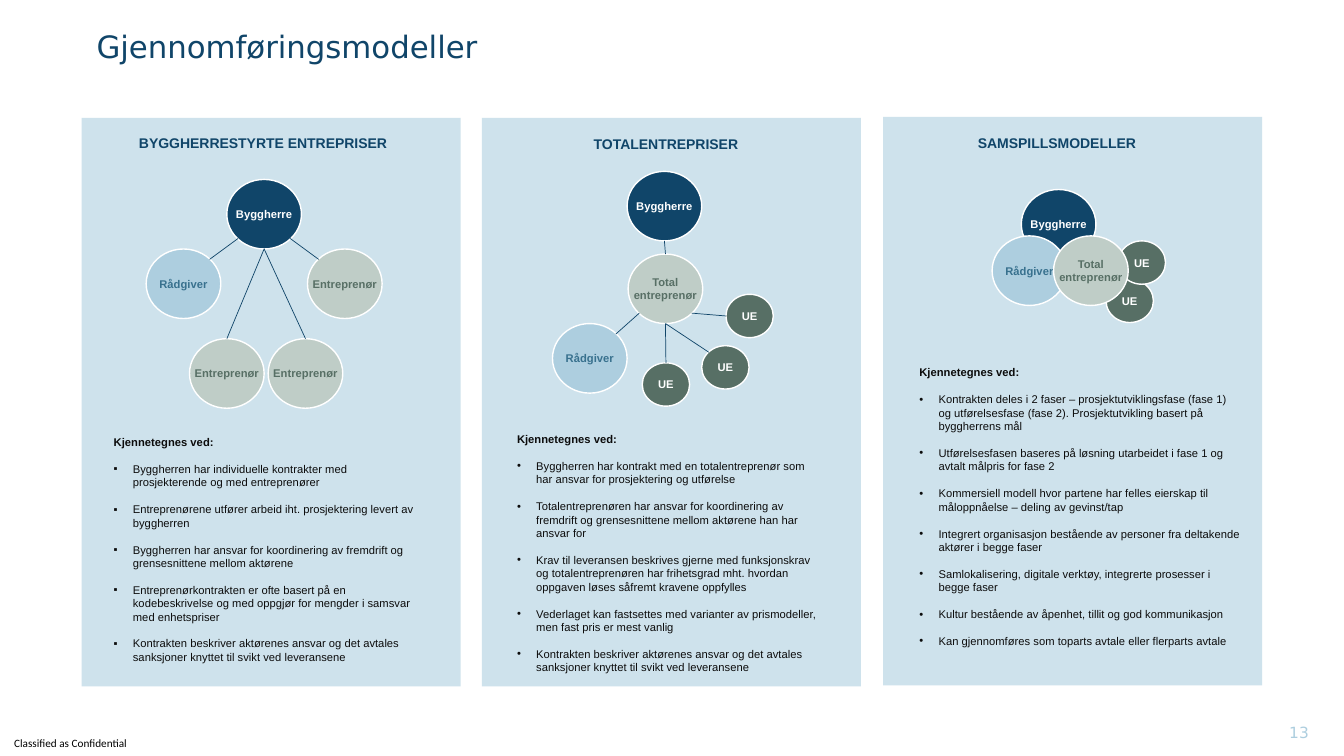
"""Build a slide comparing three contract delivery models."""
from lxml.etree import SubElement
from pptx import Presentation
from pptx.dml.color import RGBColor
from pptx.enum.shapes import MSO_CONNECTOR, MSO_SHAPE
from pptx.enum.text import MSO_ANCHOR, PP_ALIGN
from pptx.oxml.ns import qn
from pptx.util import Inches, Pt

NAVY, BLACK, WHITE, PANEL = "104569", "0C0C0C", "FFFFFF", "CEE2EC"
LARGE, SMALL = (0.74, 0.69), (0.47, 0.43)
TOP, TOP_LEFT, LEFT, BOTTOM_LEFT, BOTTOM, BOTTOM_RIGHT, RIGHT, TOP_RIGHT = range(8)
SITES = [(0.5, 0), (0.15, 0.15), (0, 0.5), (0.15, 0.85),
         (0.5, 1), (0.85, 0.85), (1, 0.5), (0.85, 0.15)]
ROLES = {
    "Byggherre": (LARGE, NAVY, WHITE),
    "Rådgiver": (LARGE, "ADCEDF", "38718E"),
    "Entreprenør": (LARGE, "BFCDC7", "576F65"),
    "Total\nentreprenør": (LARGE, "BFCDC7", "576F65"),
    "UE": (SMALL, "576F65", WHITE),
}
PAGE_TEXTS = [
    ("Gjennomføringsmodeller", (0.86, 0.16, 12.47, 0.59), 0.1,
     {"size": 22, "font": "DejaVu Sans", "color": NAVY}),
    ("13", (11.7, 7.03, 1.38, 0.47), 0.1,
     {"size": 11, "font": "DejaVu Sans", "color": "ADCEDF", "align": PP_ALIGN.RIGHT}),
    ("Classified as Confidential", (0.14, 7.25, 1.4, 0.25), 0,
     {"size": 8, "font": "Calibri", "color": "000000"}),
]
MODELS = [
    {
        "panel": (0.81, 1.17),
        "title": ("BYGGHERRESTYRTE ENTREPRISER", (1.28, 1.29, 2.69, 0.27)),
        "circles": [("Byggherre", 2.25, 1.78), ("Rådgiver", 1.45, 2.47),
                    ("Entreprenør", 1.88, 3.36), ("Entreprenør", 2.66, 3.36),
                    ("Entreprenør", 3.05, 2.47)],
        "links": [(0, BOTTOM_LEFT, 1, TOP_RIGHT), (0, BOTTOM, 2, TOP),
                  (0, BOTTOM, 3, TOP), (0, BOTTOM_RIGHT, 4, TOP_LEFT)],
        "traits_box": (1.03, 4.27, 3.27, 2.39),
        "bullet": "▪",
        "traits": [
            "Byggherren har individuelle kontrakter med prosjekterende og med entreprenører",
            "Entreprenørene utfører arbeid iht. prosjektering levert av byggherren",
            "Byggherren har ansvar for koordinering av fremdrift og grensesnittene mellom aktørene",
            "Entreprenørkontrakten er ofte basert på en kodebeskrivelse og med oppgjør for "
            "mengder i samsvar med enhetspriser",
            "Kontrakten beskriver aktørenes ansvar og det avtales sanksjoner knyttet til svikt "
            "ved leveransene",
        ],
    },
    {
        "panel": (4.78, 1.17),
        "title": ("TOTALENTREPRISER", (5.79, 1.3, 1.67, 0.27)),
        "circles": [("Byggherre", 6.22, 1.7), ("Total\nentreprenør", 6.23, 2.52),
                    ("Rådgiver", 5.48, 3.21), ("UE", 6.96, 3.43),
                    ("UE", 6.37, 3.6), ("UE", 7.2, 2.92)],
        "links": [(0, BOTTOM, 1, TOP), (1, BOTTOM_LEFT, 2, TOP_RIGHT),
                  (1, BOTTOM, 3, TOP_LEFT), (1, BOTTOM, 4, TOP),
                  (1, BOTTOM_RIGHT, 5, LEFT)],
        "traits_box": (5.03, 4.24, 3.17, 2.52),
        "bullet": "•",
        "traits": [
            "Byggherren har kontrakt med en totalentreprenør som har ansvar for prosjektering "
            "og utførelse",
            "Totalentreprenøren har ansvar for koordinering av fremdrift og grensesnittene "
            "mellom aktørene han har ansvar for",
            "Krav til leveransen beskrives gjerne med funksjonskrav og totalentreprenøren har "
            "frihetsgrad mht. hvordan oppgaven løses såfremt kravene oppfylles",
            "Vederlaget kan fastsettes med varianter av prismodeller, men fast pris er mest vanlig",
            "Kontrakten beskriver aktørenes ansvar og det avtales sanksjoner knyttet til svikt "
            "ved leveransene",
        ],
    },
    {
        "panel": (8.76, 1.16),
        "title": ("SAMSPILLSMODELLER", (9.6, 1.29, 1.79, 0.27)),
        "circles": [("Byggherre", 10.13, 1.88), ("Rådgiver", 9.84, 2.34),
                    ("UE", 10.97, 2.77), ("UE", 11.09, 2.39),
                    ("Total\nentreprenør", 10.45, 2.34)],
        "links": [],
        "traits_box": (9.02, 3.58, 3.38, 2.93),
        "bullet": "•",
        "traits": [
            "Kontrakten deles i 2 faser – prosjektutviklingsfase (fase 1) og utførelsesfase "
            "(fase 2). Prosjektutvikling basert på byggherrens mål",
            "Utførelsesfasen baseres på løsning utarbeidet i fase 1 og avtalt målpris for fase 2",
            "Kommersiell modell hvor partene har felles eierskap til måloppnåelse – deling av "
            "gevinst/tap",
            "Integrert organisasjon bestående av personer fra deltakende aktører i begge faser",
            "Samlokalisering, digitale verktøy, integrerte prosesser i begge faser",
            "Kultur bestående av åpenhet, tillit og god kommunikasjon",
            "Kan gjennomføres som toparts avtale eller flerparts avtale",
        ],
    },
]


def color(value):
    return RGBColor.from_string(value)


def set_frame(frame, margin, wrap, anchor):
    values = {"margin_left": Inches(margin), "margin_right": Inches(margin),
              "margin_top": Inches(margin / 2), "margin_bottom": Inches(margin / 2),
              "word_wrap": wrap, "vertical_anchor": anchor}
    for name, value in values.items():
        setattr(frame, name, value)


def write(frame, texts, size=8, font="Arial", color_hex=BLACK, bold=False,
          align=PP_ALIGN.LEFT, space=0):
    for text in texts:
        first = frame.paragraphs[0]
        paragraph = frame.add_paragraph() if first.runs else first
        paragraph.alignment, paragraph.space_before = align, Pt(space)
        run = paragraph.add_run()
        run.text = text
        for name, value in {"size": Pt(size), "name": font, "bold": bold}.items():
            setattr(run.font, name, value)
        run.font.color.rgb = color(color_hex)


def add_text(slide, box, margin=0.1, wrap=True, anchor=MSO_ANCHOR.TOP):
    frame = slide.shapes.add_textbox(*map(Inches, box)).text_frame
    set_frame(frame, margin, wrap, anchor)
    return frame


def add_filled(slide, kind, box, fill, line=None):
    shape = slide.shapes.add_shape(kind, *map(Inches, box))
    shape.shadow.inherit = False
    shape.fill.solid()
    shape.fill.fore_color.rgb = color(fill)
    if line:
        shape.line.color.rgb = color(line)
        shape.line.width = Pt(1)
    else:
        shape.line.fill.background()
    return shape


def add_circle(slide, role, left, top):
    size, fill, text_color = ROLES[role]
    circle = add_filled(slide, MSO_SHAPE.OVAL, (left, top, *size), fill, WHITE)
    set_frame(circle.text_frame, 0, False, MSO_ANCHOR.MIDDLE)
    write(circle.text_frame, role.split("\n"), color_hex=text_color, bold=True,
          align=PP_ALIGN.CENTER)
    return circle


def add_link(slide, ends):
    points = [round(value) for circle, site in ends for value in
              (circle.left + circle.width * SITES[site][0],
               circle.top + circle.height * SITES[site][1])]
    connector = slide.shapes.add_connector(MSO_CONNECTOR.STRAIGHT, *points)
    connector.line.color.rgb = color(NAVY)
    connector.line.width = Pt(0.5)
    SubElement(connector._element.spPr, qn("a:effectLst"))
    properties = connector._element.find(".//" + qn("p:cNvCxnSpPr"))
    for tag, (circle, site) in zip(("a:stCxn", "a:endCxn"), ends):
        SubElement(properties, qn(tag), id=str(circle.shape_id), idx=str(site))


def add_bullet(paragraph, character):
    properties = paragraph._p.get_or_add_pPr()
    properties.set("marL", str(Inches(0.19)))
    properties.set("indent", str(-Inches(0.19)))
    SubElement(properties, qn("a:buFont"), typeface="Arial")
    SubElement(properties, qn("a:buChar"), char=character)


def add_model(slide, model):
    add_filled(slide, MSO_SHAPE.RECTANGLE, (*model["panel"], 3.76, 5.64), PANEL)
    title, title_box = model["title"]
    write(add_text(slide, title_box, wrap=False), [title], size=10, color_hex=NAVY, bold=True)
    circles = [add_circle(slide, *circle) for circle in model["circles"]]
    for start, start_site, end, end_site in model["links"]:
        add_link(slide, [(circles[start], start_site), (circles[end], end_site)])
    frame = add_text(slide, model["traits_box"])
    write(frame, ["Kjennetegnes ved:"], bold=True)
    write(frame, model["traits"], space=9.6)
    for paragraph in frame.paragraphs[1:]:
        add_bullet(paragraph, model["bullet"])


def main():
    presentation = Presentation()
    presentation.slide_width, presentation.slide_height = Inches(13.33), Inches(7.5)
    slide = presentation.slides.add_slide(presentation.slide_layouts[6])
    for text, box, margin, style in PAGE_TEXTS:
        frame = add_text(slide, box, margin, anchor=MSO_ANCHOR.MIDDLE)
        write(frame, [text], style["size"], style["font"], style["color"],
              align=style.get("align", PP_ALIGN.LEFT))
    for model in MODELS:
        add_model(slide, model)
    presentation.save("out.pptx")


if __name__ == "__main__":
    main()
